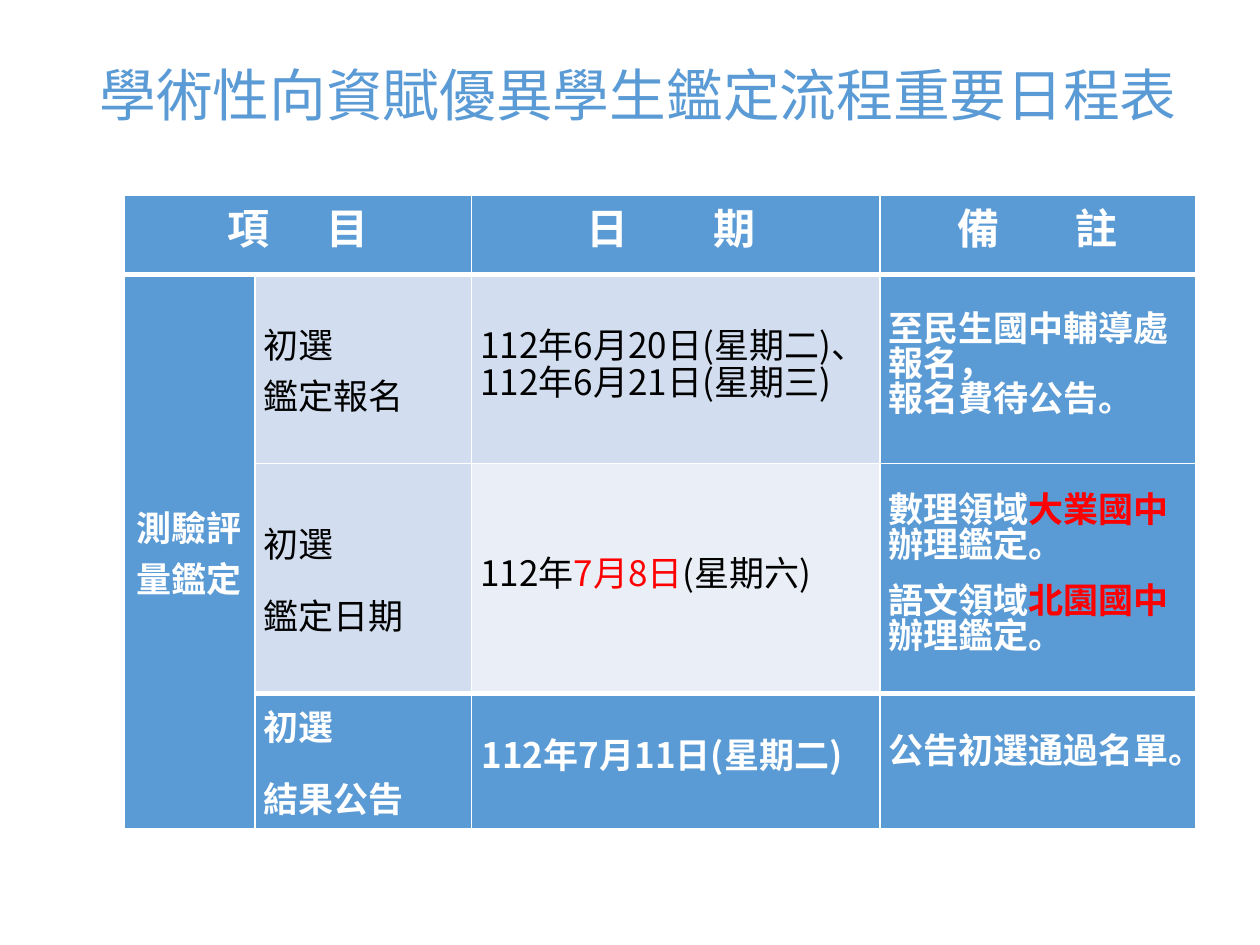
from lxml.etree import SubElement
from pptx import Presentation
from pptx.dml.color import RGBColor
from pptx.enum.text import MSO_ANCHOR, PP_ALIGN
from pptx.oxml import parse_xml
from pptx.oxml.ns import nsdecls, qn
from pptx.util import Pt

FONT = "Noto Sans CJK SC"
COLORS = {
    "blue": "5B9BD5",
    "band": "D2DEEF",
    "pale": "EAEFF7",
    "white": "FFFFFF",
    "black": "000000",
    "red": "FF0000",
}
COLUMN_WIDTHS = [74.8, 123.8, 233.3, 180.6]
ROW_HEIGHTS = [45.2, 108, 131.6, 77.2]
HEADERS = [(0, "項", "目", 13.5), (2, "日", "期 ", 21.5), (3, "備", "註", 19)]
BODY = [
    {"row": 1, "column": 0, "fill": "blue", "center": True, "lines": ["測驗評量鑑定"]},
    {"row": 1, "column": 1, "fill": "band", "lines": ["初選", "鑑定報名"]},
    {"row": 1, "column": 2, "fill": "band", "spacing": 21,
     "lines": ["112年6月20日(星期二)、", "112年6月21日(星期三)"]},
    {"row": 1, "column": 3, "fill": "blue", "spacing": 20,
     "lines": [["至民生國中輔導處報名，", "\v", "報名費待公告。"]]},
    {"row": 2, "column": 1, "fill": "band", "gap": 12, "lines": ["初選", "鑑定日期"]},
    {"row": 2, "column": 2, "fill": "pale", "spacing": 21,
     "lines": [["112年", ("7月8日", "red"), "(星期六)"]]},
    {"row": 2, "column": 3, "fill": "blue", "spacing": 20, "gap": 12,
     "lines": [["數理領域", ("大業國中", "red"), "辦理鑑定。"],
               ["語文領域", ("北園國中", "red"), "辦理鑑定。"]]},
    {"row": 3, "column": 1, "fill": "blue", "gap": 12, "lines": ["初選", "結果公告"]},
    {"row": 3, "column": 2, "fill": "blue", "spacing": 20, "hanging": True,
     "lines": ["112年7月11日(星期二)"]},
    {"row": 3, "column": 3, "fill": "blue", "spacing": 14, "lines": ["公告初選通過名單。"]},
]


def rgb(name):
    """Return the named colour."""
    return RGBColor.from_string(COLORS[name])


def set_font(paragraph, size, bold=False):
    """Set the Latin and East Asian font of a paragraph."""
    paragraph.font.size = Pt(size)
    paragraph.font.bold = bold
    paragraph.font.name = FONT
    properties = paragraph._p.get_or_add_pPr().find(qn("a:defRPr"))
    SubElement(properties, qn("a:ea")).set("typeface", FONT)


def add_run(paragraph, text, color):
    """Add a coloured run and return it."""
    run = paragraph.add_run()
    run.text = text
    run.font.color.rgb = rgb(color)
    return run


def add_title(slide, left, top, width, height):
    """Place the slide title in the given box."""
    frame = slide.shapes.add_textbox(Pt(left), Pt(top), Pt(width), Pt(height)).text_frame
    frame.word_wrap = True
    frame.margin_top = Pt(10)
    paragraph = frame.paragraphs[0]
    paragraph.line_spacing = 0.9
    add_run(paragraph, "學術性向資賦優異學生鑑定流程重要日程表", "blue")
    set_font(paragraph, 32.4)


def style_cell(cell, row, column):
    """Give a cell its margins and white borders, thick below the header and above the result."""
    cell.margin_left = cell.margin_right = Pt(5)
    cell.margin_top = cell.margin_bottom = 0
    thick_top = row == 1 or (row == 3 and column > 0)
    thick_bottom = row == 0 or (row == 2 and column > 0)
    widths = {"L": 1, "R": 1, "T": 3 if thick_top else 1, "B": 3 if thick_bottom else 1}
    properties = cell._tc.get_or_add_tcPr()
    for index, (side, width) in enumerate(widths.items()):
        properties.insert(index, parse_xml(
            f'<a:ln{side} {nsdecls("a")} w="{Pt(width)}"><a:solidFill>'
            f'<a:srgbClr val="{COLORS["white"]}"/></a:solidFill></a:ln{side}>'))


def fill_cell(cell, color):
    """Fill a cell with a named colour."""
    cell.fill.solid()
    cell.fill.fore_color.rgb = rgb(color)


def fill_header(cell, first, last, tracking):
    """Write a header of two spread characters."""
    fill_cell(cell, "blue")
    paragraph = cell.text_frame.paragraphs[0]
    paragraph.alignment = PP_ALIGN.CENTER
    spread = add_run(paragraph, first + " ", "white")
    spread._r.get_or_add_rPr().set("spc", str(int(tracking * 100)))
    add_run(paragraph, last, "white")
    set_font(paragraph, 24, True)


def fill_body(cell, entry):
    """Write the paragraphs of one body cell."""
    fill_cell(cell, entry["fill"])
    cell.vertical_anchor = MSO_ANCHOR.MIDDLE
    on_blue = entry["fill"] == "blue"
    frame = cell.text_frame
    for index, line in enumerate(entry["lines"]):
        paragraph = frame.add_paragraph() if index else frame.paragraphs[0]
        if index and "gap" in entry:
            paragraph.space_before = Pt(entry["gap"])
        if "spacing" in entry:
            paragraph.line_spacing = Pt(entry["spacing"])
        if entry.get("center"):
            paragraph.alignment = PP_ALIGN.CENTER
        if entry.get("hanging"):
            properties = paragraph._p.get_or_add_pPr()
            properties.set("marL", str(Pt(18)))
            properties.set("indent", str(-Pt(17.3)))
        for part in [line] if isinstance(line, str) else line:
            if part == "\v":
                paragraph.add_line_break()
                continue
            default = "white" if on_blue else "black"
            text, color = (part, default) if isinstance(part, str) else part
            add_run(paragraph, text, color)
        set_font(paragraph, 20, on_blue)


def add_schedule(slide, left, top):
    """Place the schedule table at the given corner."""
    table = slide.shapes.add_table(
        len(ROW_HEIGHTS), len(COLUMN_WIDTHS), Pt(left), Pt(top),
        Pt(sum(COLUMN_WIDTHS)), Pt(sum(ROW_HEIGHTS))).table
    table.first_row = table.horz_banding = False
    for column, width in zip(table.columns, COLUMN_WIDTHS):
        column.width = Pt(width)
    for row, height in zip(table.rows, ROW_HEIGHTS):
        row.height = Pt(height)
    table.cell(0, 0).merge(table.cell(0, 1))
    table.cell(1, 0).merge(table.cell(3, 0))
    for column, first, last, tracking in HEADERS:
        fill_header(table.cell(0, column), first, last, tracking)
    for entry in BODY:
        fill_body(table.cell(entry["row"], entry["column"]), entry)
    for row in range(len(ROW_HEIGHTS)):
        for column in range(len(COLUMN_WIDTHS)):
            style_cell(table.cell(row, column), row, column)


def main():
    """Build and save the slide."""
    presentation = Presentation()
    presentation.slide_width, presentation.slide_height = Pt(720), Pt(540)
    slide = presentation.slides.add_slide(presentation.slide_layouts[6])
    add_title(slide, 49.7, 28.8, 633.6, 104.4)
    add_schedule(slide, 70.9, 111.6)
    presentation.save("out.pptx")


if __name__ == "__main__":
    main()
